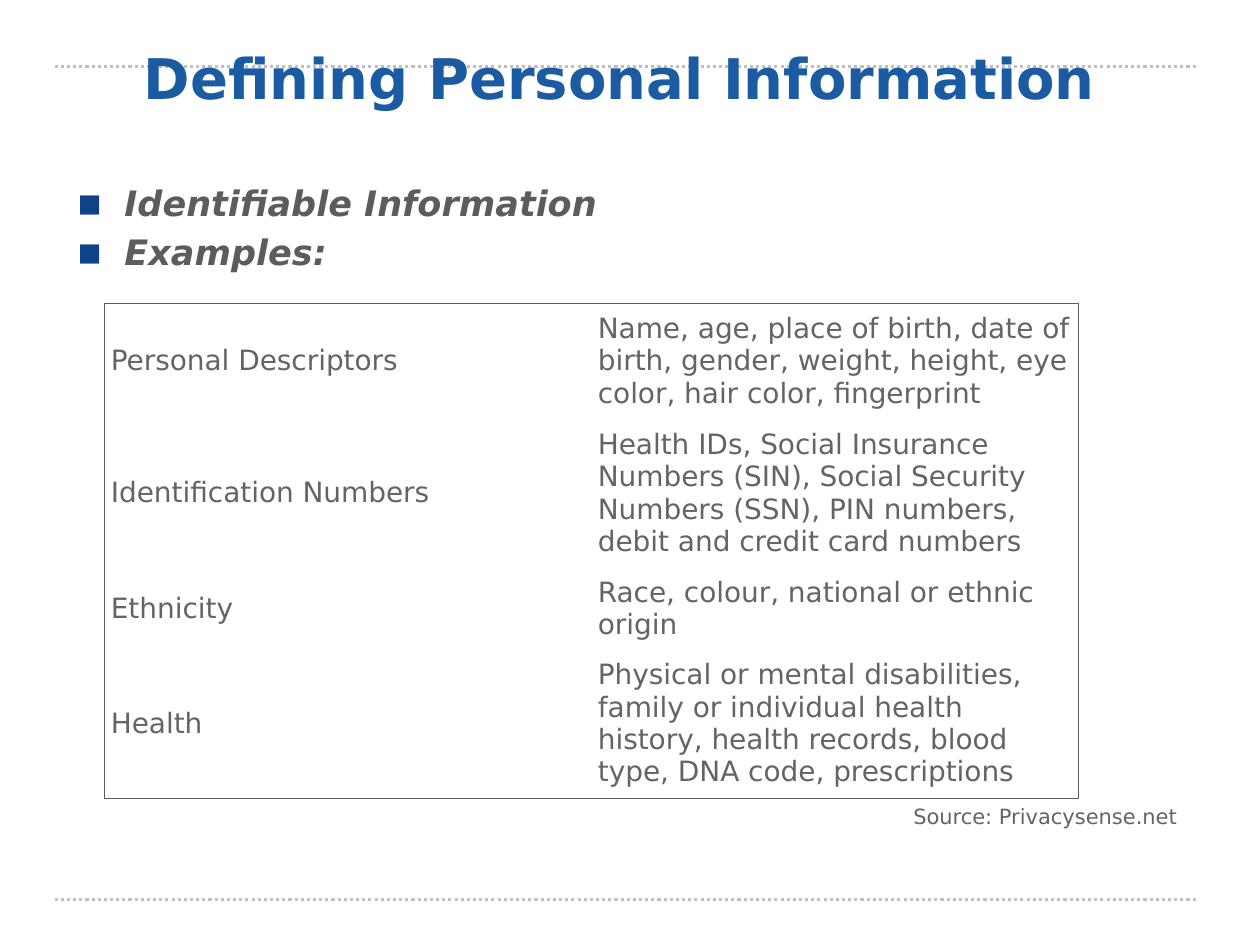
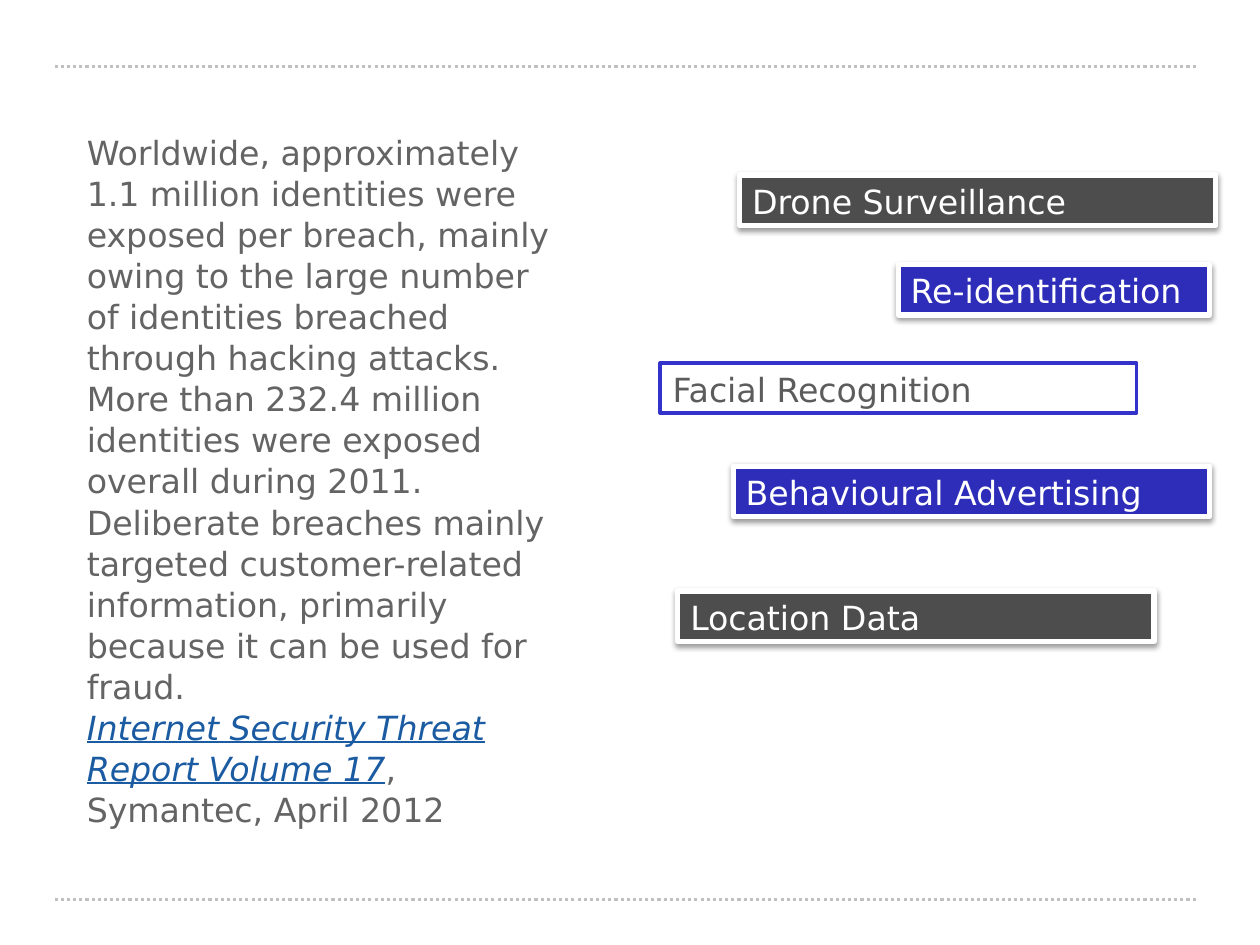
from lxml import etree
from pptx import Presentation
from pptx.dml.color import RGBColor
from pptx.enum import dml, shapes, text
from pptx.oxml import ns
from pptx.util import Inches, Pt

FONT = "DejaVu Sans"
BLUE, NAVY, RULE = "1B5BA2", "0E438A", "C0C0C0"
BODY, DARK = "646464", "5C5C5C"
CHARCOAL, INDIGO, FRAME, WHITE = "4D4D4D", "2D2DB9", "3333CC", "FFFFFF"

EXAMPLES = [
    ("Personal Descriptors",
     "Name, age, place of birth, date of birth, gender, weight, height, "
     "eye color, hair color, fingerprint", 0.91),
    ("Identification Numbers",
     "Health IDs, Social Insurance Numbers (SIN), Social Security Numbers (SSN), "
     "PIN numbers, debit and credit card numbers", 1.19),
    ("Ethnicity", "Race, colour, national or ethnic origin", 0.64),
    ("Health",
     "Physical or mental disabilities, family or individual health history, "
     "health records, blood type, DNA code, prescriptions", 1.19),
]
BREACH_TEXT = (
    "Worldwide, approximately 1.1 million identities were exposed per breach, "
    "mainly owing to the large number of identities breached through hacking attacks. "
    "More than 232.4 million identities were exposed overall during 2011. "
    "Deliberate breaches mainly targeted customer-related information, "
    "primarily because it can be used for fraud.")
# label, left and top within the region, width, fill, line, line width, text colour
THREATS = [
    ("Drone Surveillance", 0.63, 0, 3.78, CHARCOAL, WHITE, 3, WHITE),
    ("Re-identification", 1.89, 0.71, 2.47, INDIGO, WHITE, 3, WHITE),
    ("Facial Recognition", 0, 1.49, 3.78, WHITE, FRAME, 2, DARK),
    ("Behavioural Advertising", 0.58, 2.31, 3.78, INDIGO, WHITE, 3, WHITE),
    ("Location Data", 0.14, 3.3, 3.78, CHARCOAL, WHITE, 3, WHITE),
]


def color(hex_value):
    return RGBColor.from_string(hex_value)


def add_element(parent, tag, **attributes):
    return etree.SubElement(parent, ns.qn(tag), attributes)


def format_font(font, size, hex_value, **values):
    values = {"name": FONT, "size": Pt(size), **values}
    for name, value in values.items():
        setattr(font, name, value)
    font.color.rgb = color(hex_value)


def add_run(paragraph, words, size, hex_value, **values):
    run = paragraph.add_run()
    run.text = words
    format_font(run.font, size, hex_value, **values)


def add_text_box(slide, box):
    frame = slide.shapes.add_textbox(*map(Inches, box)).text_frame
    frame.word_wrap = True
    return frame


# Shared parts
def add_rules(slide):
    for top in (0.53, 7.14):
        rule = slide.shapes.add_connector(
            shapes.MSO_CONNECTOR.STRAIGHT,
            Inches(9.49), Inches(top), Inches(0.43), Inches(top))
        rule.line.color.rgb = color(RULE)
        rule.line.width = Pt(1.75)
        rule.line.dash_style = dml.MSO_LINE.ROUND_DOT
        element = rule._element
        add_element(element.spPr, "a:effectLst")
        element.getparent().insert(2, element)  # behind everything else


def set_title(slide, words, box):
    title = slide.shapes.title
    title.left, title.top, title.width, title.height = map(Inches, box)
    frame = title.text_frame
    frame.auto_size = text.MSO_AUTO_SIZE.NONE
    frame.vertical_anchor = text.MSO_ANCHOR.MIDDLE
    paragraph = frame.paragraphs[0]
    paragraph.alignment = text.PP_ALIGN.CENTER
    add_run(paragraph, words, 32, BLUE, bold=True)


# Personal information slide
def add_bullets(slide, items, box):
    frame = add_text_box(slide, box)
    for index, item in enumerate(items):
        paragraph = frame.add_paragraph() if index else frame.paragraphs[0]
        properties = paragraph._p.get_or_add_pPr()
        properties.set("marL", str(Inches(0.38)))
        properties.set("indent", str(-Inches(0.38)))
        if index:
            paragraph.space_before = Pt(4)
        bullet_color = add_element(properties, "a:buClr")
        add_element(bullet_color, "a:srgbClr", val=NAVY)
        add_element(properties, "a:buSzPct", val="110000")
        add_element(properties, "a:buFont", typeface=FONT)
        add_element(properties, "a:buChar", char="▪")
        add_run(paragraph, item, 20, DARK, bold=True, italic=True)


def set_borders(cell, visible):
    properties = cell._tc.get_or_add_tcPr()
    for side in "LRTB":
        line = add_element(properties, "a:ln" + side, w=str(Pt(1)))
        if side in visible:
            fill = add_element(line, "a:solidFill")
            add_element(fill, "a:srgbClr", val=DARK)
        else:
            add_element(line, "a:noFill")


def add_examples_table(slide, box):
    table = slide.shapes.add_table(len(EXAMPLES), 2, *map(Inches, box)).table
    table.first_row = table.horz_banding = False
    for column in table.columns:
        column.width = Inches(box[2] / 2)
    last = len(EXAMPLES) - 1
    for row, (kind, details, height) in enumerate(EXAMPLES):
        table.rows[row].height = Inches(height)
        edges = ("T" if row == 0 else "") + ("B" if row == last else "")
        for column, (words, side) in enumerate(((kind, "L"), (details, "R"))):
            cell = table.cell(row, column)
            set_borders(cell, edges + side)
            cell.fill.background()
            cell.vertical_anchor = text.MSO_ANCHOR.MIDDLE
            for edge in ("left", "right", "top", "bottom"):
                setattr(cell, "margin_" + edge, Inches(0.05))
            add_run(cell.text_frame.paragraphs[0], words, 16, BODY)


def build_information_slide(presentation):
    slide = presentation.slides.add_slide(presentation.slide_layouts[5])
    add_rules(slide)
    set_title(slide, "Defining Personal Information", (0.67, 0.29, 8.5, 0.64))
    add_bullets(slide, ["Identifiable Information", "Examples:"], (0.51, 1.39, 8.5, 0.9))
    add_examples_table(slide, (0.83, 2.41, 7.73, 3.93))
    source = add_text_box(slide, (7.15, 6.33, 2.83, 0.3))
    add_run(source.paragraphs[0], "Source: Privacysense.net", 12, BODY)


# Breaches slide
def add_breach_text(slide, box):
    frame = add_text_box(slide, box)
    statement, citation = frame.paragraphs[0], frame.add_paragraph()
    add_run(statement, BREACH_TEXT, 19, BODY)
    add_run(citation, "Internet Security Threat Report Volume 17", 19, BLUE,
            italic=True, underline=True)
    add_run(citation, ", Symantec, April 2012", 19, BODY)
    for paragraph in frame.paragraphs:
        paragraph.line_spacing = 1.03


def add_shadow(shape):
    effects = shape._element.spPr.find(ns.qn("a:effectLst"))
    shadow = add_element(effects, "a:outerShdw", blurRad=str(Pt(3.1)),
                         dist=str(Pt(1.6)), dir="5400000", rotWithShape="0")
    shade = add_element(shadow, "a:srgbClr", val="000000")
    add_element(shade, "a:alpha", val="38000")


def add_threat_labels(slide, left, top):
    for label, x, y, width, fill, line, line_width, ink in THREATS:
        shape = slide.shapes.add_shape(
            shapes.MSO_SHAPE.RECTANGLE,
            *map(Inches, (left + x, top + y, width, 0.4)))
        shape.fill.solid()
        shape.fill.fore_color.rgb = color(fill)
        shape.line.color.rgb = color(line)
        shape.line.width = Pt(line_width)
        shape.shadow.inherit = False
        if line == WHITE:
            add_shadow(shape)
        frame = shape.text_frame
        frame.word_wrap = True
        frame.auto_size = text.MSO_AUTO_SIZE.SHAPE_TO_FIT_TEXT
        frame.vertical_anchor = text.MSO_ANCHOR.TOP
        paragraph = frame.paragraphs[0]
        paragraph.alignment = text.PP_ALIGN.LEFT
        add_run(paragraph, label, 19, ink)


def build_breaches_slide(presentation):
    slide = presentation.slides.add_slide(presentation.slide_layouts[6])
    add_rules(slide)
    add_breach_text(slide, (0.59, 0.99, 4.02, 4.95))
    add_threat_labels(slide, 5.24, 1.39)


def main():
    presentation = Presentation()
    presentation.slide_width, presentation.slide_height = Inches(10), Inches(7.5)
    build_information_slide(presentation)
    build_breaches_slide(presentation)
    presentation.save("out.pptx")


if __name__ == "__main__":
    main()
